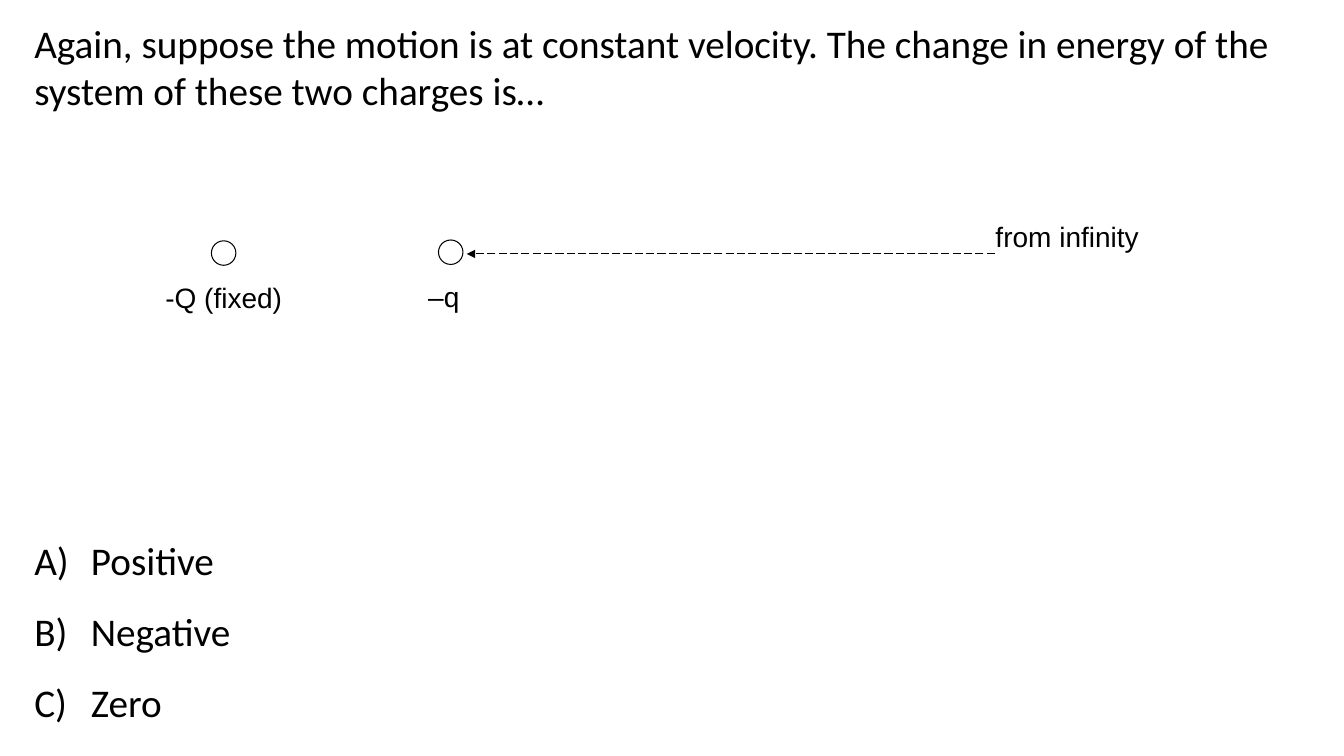
from dataclasses import dataclass

from lxml import etree
from pptx import Presentation
from pptx.dml.color import RGBColor
from pptx.enum.dml import MSO_LINE
from pptx.enum.shapes import MSO_CONNECTOR, MSO_SHAPE
from pptx.enum.text import MSO_ANCHOR, MSO_AUTO_SIZE, PP_ALIGN
from pptx.oxml.ns import qn
from pptx.util import Pt

DASH = MSO_LINE.LONG_DASH
LINE = MSO_CONNECTOR.STRAIGHT
OVAL = MSO_SHAPE.OVAL
TOP = MSO_ANCHOR.TOP
FIXED = MSO_AUTO_SIZE.NONE
LEFT = PP_ALIGN.LEFT

COLORS = {"ink": "000000", "paper": "FFFFFF"}
SIZE = 17.5
THIN = 0.75
INDENT = 40.5


@dataclass
class Charge:
    left: float
    top: float


@dataclass
class Label:
    text: str
    left: float
    top: float
    width: float
    height: float


CHARGES = [Charge(151, 172), Charge(313.2, 171.4)]
LABELS = [
    Label("-Q (fixed)", 111, 197, 101, 61),
    Label("–q", 298.8, 196, 56, 42.5),
    Label("from infinity", 704, 153, 222, 42.5),
]
CHOICES = ["Positive", "Negative", "Zero"]


def tint(name: str) -> RGBColor:
    return RGBColor.from_string(COLORS[name])


def style(para, face: str, size: float) -> None:
    para.alignment = LEFT
    para.font.name = face
    para.font.size = Pt(size)
    para.font.color.rgb = tint("ink")


def place(shape, left: float, top: float, width: float, height: float) -> None:
    shape.left, shape.top = Pt(left), Pt(top)
    shape.width, shape.height = Pt(width), Pt(height)
    frame = shape.text_frame
    frame.word_wrap = True
    frame.auto_size = FIXED
    frame.vertical_anchor = TOP


def number(para) -> None:
    props = para._p.get_or_add_pPr()
    props.set("marL", str(Pt(INDENT)))
    props.set("indent", str(-Pt(INDENT)))
    etree.SubElement(props, qn("a:buFont"), typeface="+mj-lt")
    etree.SubElement(props, qn("a:buAutoNum"), type="alphaUcParenR")


def add_title(slide) -> None:
    title = slide.shapes.title
    place(title, 17.3, 10, 908, 75)
    title.text_frame.text = (
        "Again, suppose the motion is at constant velocity. "
        "The change in energy of the system of these two charges is…"
    )
    style(title.text_frame.paragraphs[0], "Calibri", 28)


def add_list(slide) -> None:
    body = slide.placeholders[1]
    place(body, 17.3, 363, 156, 160)
    body.text_frame.text = "\n".join(CHOICES)
    for para in body.text_frame.paragraphs:
        number(para)
        para.line_spacing = 1.5
        para.space_before = Pt(0)
        style(para, "Calibri", 28)


def add_path(slide) -> None:
    path = slide.shapes.add_connector(LINE, Pt(710.6), Pt(181.4), Pt(333.4), Pt(181.4))
    path.line.color.rgb = tint("ink")
    path.line.width = Pt(THIN)
    path.line.dash_style = DASH
    etree.SubElement(path.line._get_or_add_ln(), qn("a:tailEnd"), type="triangle")
    etree.SubElement(path._element.spPr, qn("a:effectLst"))


def add_charge(slide, charge: Charge) -> None:
    ball = slide.shapes.add_shape(OVAL, Pt(charge.left), Pt(charge.top), Pt(SIZE), Pt(SIZE))
    ball.shadow.inherit = False
    ball.fill.solid()
    ball.fill.fore_color.rgb = tint("paper")
    ball.line.color.rgb = tint("ink")
    ball.line.width = Pt(THIN)


def add_label(slide, label: Label) -> None:
    box = slide.shapes.add_textbox(0, 0, 0, 0)
    place(box, label.left, label.top, label.width, label.height)
    box.text_frame.text = label.text
    style(box.text_frame.paragraphs[0], "Arial", 20)


def main() -> None:
    deck = Presentation()
    deck.slide_width, deck.slide_height = Pt(960), Pt(540)
    slide = deck.slides.add_slide(deck.slide_layouts[1])
    add_title(slide)
    add_list(slide)
    add_path(slide)
    for charge in CHARGES:
        add_charge(slide, charge)
    for label in LABELS:
        add_label(slide, label)
    deck.save("out.pptx")


if __name__ == "__main__":
    main()
